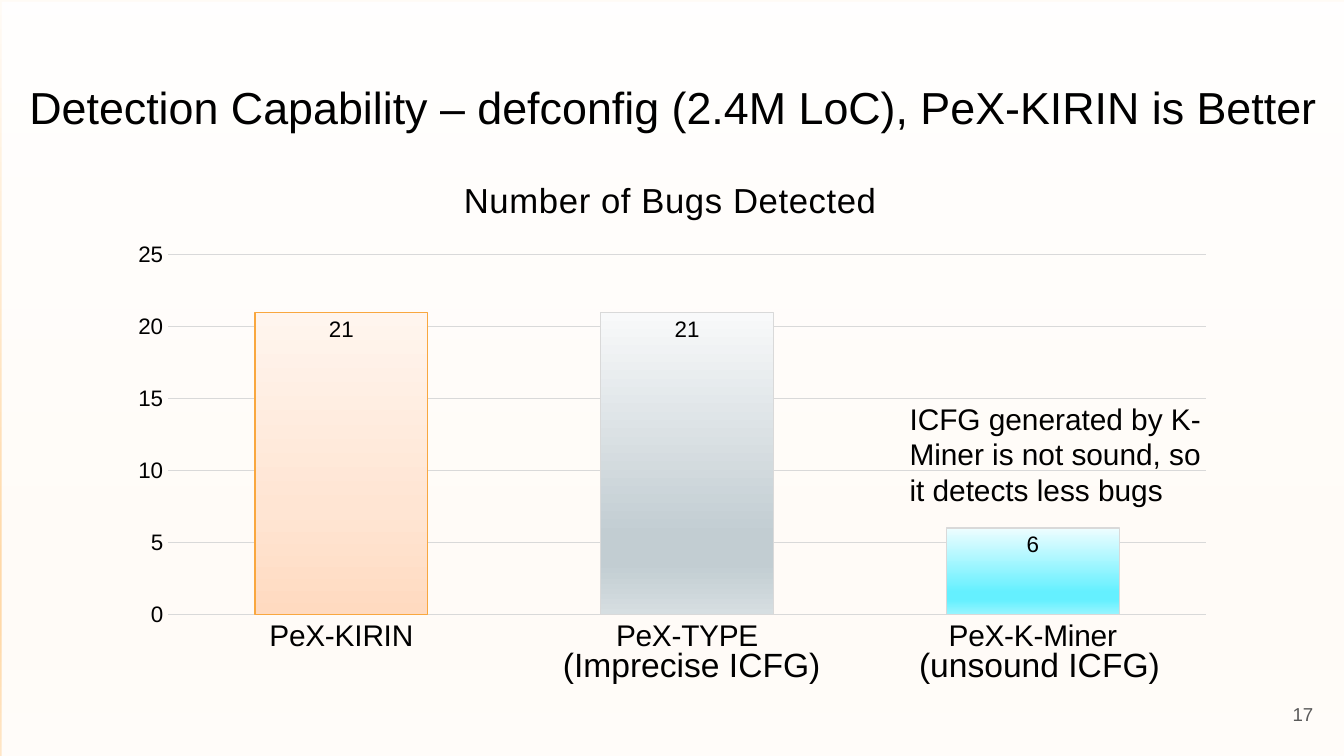
from dataclasses import dataclass

from lxml.etree import SubElement
from pptx import Presentation
from pptx.chart.data import CategoryChartData
from pptx.dml.color import RGBColor
from pptx.enum.chart import XL_CHART_TYPE, XL_LABEL_POSITION, XL_TICK_MARK
from pptx.enum.shapes import MSO_SHAPE
from pptx.enum.text import MSO_ANCHOR, MSO_AUTO_SIZE, PP_ALIGN
from pptx.oxml.ns import qn
from pptx.util import Cm, Pt


@dataclass(frozen=True)
class Theme:
    font: str = "Arial"
    ink: str = "000000"
    muted: str = "595959"
    grid: str = "D9D9D9"
    veil: str = "FFFFFF"
    accent: str = "F9A73F"
    # Gradients are (clockwise angle, stops)
    backdrop: tuple = (90, ((0, "FFFBF5"), (74, "FFD9A9"), (83, "FFD9A9"), (100, "FFE6C6")))
    peach: tuple = (270, ((0, "FFDAC0"), (35, "FFE5D3"), (100, "FFF5EE")))
    silver: tuple = (90, ((0, "F8F9FA"), (74, "C2CDD2"), (83, "C2CDD2"), (100, "D6DEE1")))
    cyan: tuple = (90, ((0, "EEFDFF"), (74, "65F0FF"), (83, "65F0FF"), (100, "98F5FF")))
    title_size: float = 24
    chart_title_size: float = 18.6
    remark_size: float = 18
    note_size: float = 16
    value_size: float = 12
    number_size: float = 10


def rgb(color):
    return RGBColor.from_string(color)


class BugSlide:
    def __init__(self, deck, theme):
        self.theme = theme
        self.slide = deck.slides.add_slide(deck.slide_layouts[5])

    def style(self, font, size, color=None):
        font.name = self.theme.font
        font.size = Pt(size)
        font.bold = False
        font.color.rgb = rgb(color or self.theme.ink)

    def gradient(self, fill, gradient):
        angle, stops = gradient
        fill.gradient()
        fill.gradient_angle = 360 - angle
        stop_list = fill._xPr.find(qn("a:gradFill")).find(qn("a:gsLst"))
        for stop in list(stop_list):
            stop_list.remove(stop)
        for position, color in stops:
            stop = SubElement(stop_list, qn("a:gs"), pos=str(position * 1000))
            SubElement(stop, qn("a:srgbClr"), val=color)

    def line(self, line, color):
        line.color.rgb = rgb(color)
        line.width = Pt(0.75)

    def background(self, width, height):
        self.gradient(self.slide.background.fill, self.theme.backdrop)
        veil = self.slide.shapes.add_shape(MSO_SHAPE.RECTANGLE, Cm(0.03), Cm(0.03),
                                           width - Cm(0.03), height - Cm(0.03))
        veil.shadow.inherit = False
        veil.fill.solid()
        veil.fill.fore_color.rgb = rgb(self.theme.veil)
        veil.line.fill.background()
        color = veil.fill._xPr.find(qn("a:solidFill"))[0]
        SubElement(color, qn("a:alpha"), val="91000")
        # Behind the title placeholder
        self.slide.shapes._spTree.insert(2, veil._element)

    def fill_text(self, frame, text, size, color=None, wrap=False,
                  align=PP_ALIGN.LEFT, anchor=MSO_ANCHOR.TOP):
        frame.word_wrap = wrap
        frame.auto_size = MSO_AUTO_SIZE.SHAPE_TO_FIT_TEXT
        frame.vertical_anchor = anchor
        paragraph = frame.paragraphs[0]
        paragraph.alignment = align
        run = paragraph.add_run()
        run.text = text
        self.style(run.font, size, color)

    def title(self, text, left, top, width, height):
        heading = self.slide.shapes.title
        heading.left, heading.top = Cm(left), Cm(top)
        heading.width, heading.height = Cm(width), Cm(height)
        self.fill_text(heading.text_frame, text, self.theme.title_size)

    def text(self, text, left, top, width, height, size, **options):
        box = self.slide.shapes.add_textbox(Cm(left), Cm(top), Cm(width), Cm(height))
        self.fill_text(box.text_frame, text, size, **options)
        return box.text_frame

    def page_number(self, text, left, top, width, height):
        frame = self.text(text, left, top, width, height, self.theme.number_size,
                          color=self.theme.muted, wrap=True,
                          align=PP_ALIGN.RIGHT, anchor=MSO_ANCHOR.MIDDLE)
        frame.margin_left = frame.margin_right = Cm(0.25)
        frame.margin_top = frame.margin_bottom = Cm(0.25)
        frame.auto_size = MSO_AUTO_SIZE.NONE

    def bar_chart(self, name, bugs, left, top, width, height):
        theme = self.theme
        data = CategoryChartData()
        data.categories = list(bugs)
        data.add_series(name, list(bugs.values()))
        chart = self.slide.shapes.add_chart(
            XL_CHART_TYPE.COLUMN_CLUSTERED, Cm(left), Cm(top), Cm(width), Cm(height), data).chart
        self.style(chart.font, theme.number_size)
        chart.has_legend = False

        # Chart title
        run = chart.chart_title.text_frame.paragraphs[0].add_run()
        run.text = name
        self.style(run.font, theme.chart_title_size)
        run.font._element.set("spc", "25")

        # Axes
        for axis, size in ((chart.category_axis, theme.note_size),
                           (chart.value_axis, theme.value_size)):
            axis.major_tick_mark = axis.minor_tick_mark = XL_TICK_MARK.NONE
            self.style(axis.tick_labels.font, size)
        self.line(chart.category_axis.format.line, theme.grid)
        scale = chart.value_axis
        scale.minimum_scale, scale.maximum_scale, scale.major_unit = 0, 25, 5
        scale.format.line.fill.background()
        self.line(scale.major_gridlines.format.line, theme.grid)

        # Columns
        plot = chart.plots[0]
        plot.gap_width, plot.overlap = 100, -24
        plot.vary_by_categories = False
        series = plot.series[0]
        self.gradient(series.format.fill, theme.peach)
        self.line(series.format.line, theme.accent)
        for index, fill in enumerate((theme.silver, theme.cyan), start=1):
            column = series.points[index].format
            self.gradient(column.fill, fill)
            self.line(column.line, theme.grid)

        # Value labels
        labels = series.data_labels
        labels.show_value = True
        labels.position = XL_LABEL_POSITION.INSIDE_END
        self.style(labels.font, theme.value_size)

        # Plot area, as fractions of the chart
        area = chart._chartSpace.chart.plotArea
        layout = area.find(qn("c:layout"))
        if layout is None:
            layout = area.makeelement(qn("c:layout"))
            area.insert(0, layout)
        manual = SubElement(layout, qn("c:manualLayout"))
        for tag, value in (("layoutTarget", "inner"), ("xMode", "edge"), ("yMode", "edge"),
                           ("x", 0.05), ("y", 0.2), ("w", 0.93), ("h", 0.71)):
            SubElement(manual, qn(f"c:{tag}"), val=str(value))


def main():
    deck = Presentation()
    deck.slide_width, deck.slide_height = Cm(25.4), Cm(14.29)
    theme = Theme()
    page = BugSlide(deck, theme)

    # Backdrop, title and page number
    page.background(deck.slide_width, deck.slide_height)
    page.title("Detection Capability – defconfig (2.4M LoC), PeX-KIRIN is Better",
               0.3, 1.37, 25.1, 1.27)
    page.page_number("17", 23.55, 12.95, 1.52, 1.09)

    # Bugs found by each variant
    page.bar_chart("Number of Bugs Detected",
                   {"PeX-KIRIN": 21, "PeX-TYPE": 21, "PeX-K-Miner": 6},
                   2.13, 2.9, 21.08, 9.58)

    # Remarks on the call graphs
    page.text("ICFG generated by K-Miner is not sound, so it detects less bugs",
              16.94, 7.44, 6.27, 2.31, theme.note_size, wrap=True)
    for remark, left, width in (("(Imprecise ICFG)", 10.39, 5.44),
                                ("(unsound ICFG)", 17.12, 5.11)):
        page.text(remark, left, 12.04, width, 1.02, theme.remark_size)

    deck.save("out.pptx")


if __name__ == "__main__":
    main()
